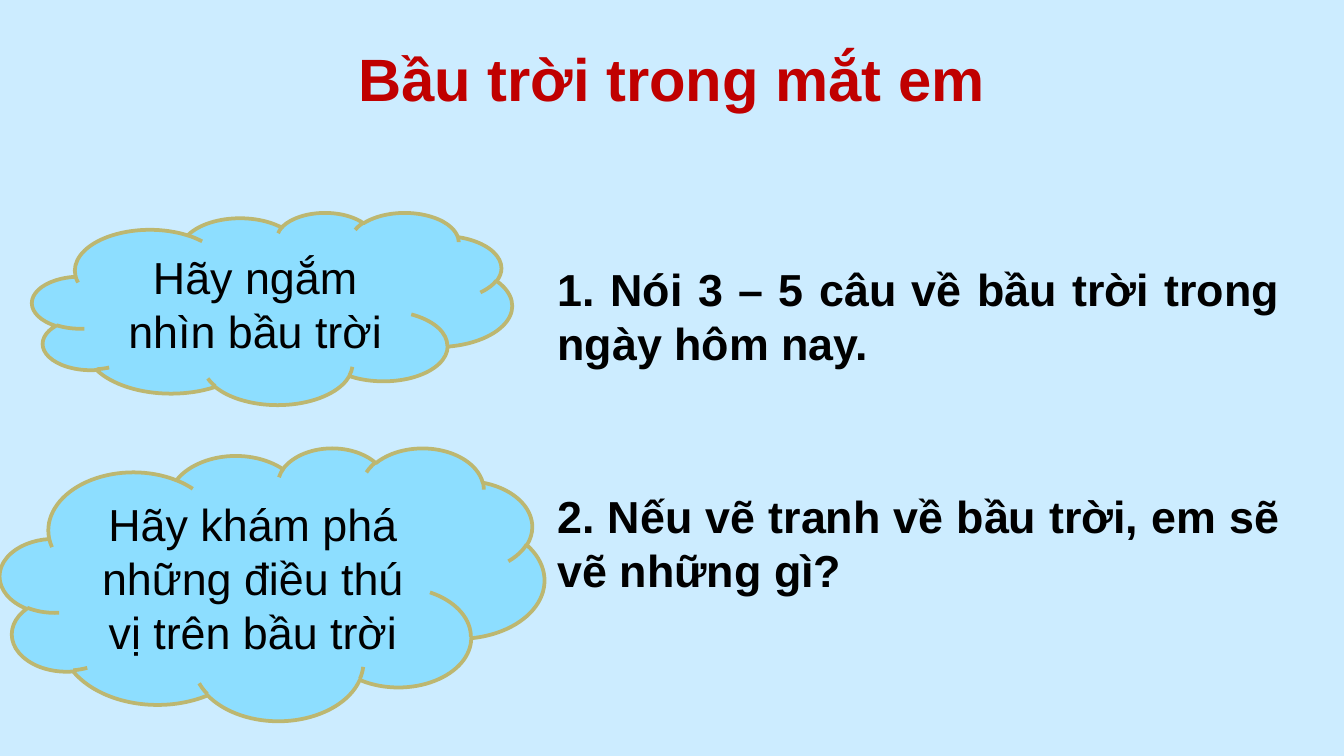
from dataclasses import dataclass

import pptx
import pptx.dml.color
import pptx.enum.shapes
import pptx.enum.text
import pptx.util
from pptx.util import Inches

ALIGN = pptx.enum.text.PP_ALIGN
ANCHOR = pptx.enum.text.MSO_ANCHOR


@dataclass(frozen=True)
class Theme:
    font: str = "Arial"
    background: str = "CCECFF"
    title: str = "C00000"
    text: str = "000000"
    cloud: str = "8DDEFF"
    outline: str = "BDB770"
    title_size: int = 32
    body_size: int = 24
    outline_width: int = 2


@dataclass(frozen=True)
class Block:
    text: str
    left: float
    top: float
    width: float
    height: float


THEME = Theme()

TITLE = Block("Bầu trời trong mắt em", 2.1, 0.26, 5.8, 0.64)
TASKS = [
    Block("1. Nói 3 – 5 câu về bầu trời trong ngày hôm nay.", 4.05, 1.9, 5.57, 0.91),
    Block("2. Nếu vẽ tranh về bầu trời, em sẽ vẽ những gì?", 4.05, 3.59, 5.57, 0.91),
]
CLOUDS = [
    Block("Hãy ngắm nhìn bầu trời", 0.24, 1.58, 3.57, 1.43),
    Block("Hãy khám phá những điều thú vị trên bầu trời", 0, 3.33, 4.05, 2.03),
]


def rgb(value: str) -> pptx.dml.color.RGBColor:
    return pptx.dml.color.RGBColor.from_string(value)


def bounds(block: Block) -> tuple:
    return tuple(Inches(v) for v in (block.left, block.top, block.width, block.height))


def write_text(shape, text: str, *, size: int = THEME.body_size, color: str = THEME.text,
               bold: bool = False, align=ALIGN.CENTER, anchor=ANCHOR.TOP) -> None:
    frame = shape.text_frame
    frame.word_wrap = True
    frame.vertical_anchor = anchor
    paragraph = frame.paragraphs[0]
    paragraph.alignment = align
    run = paragraph.add_run()
    run.text = text
    run.font.name = THEME.font
    run.font.size = pptx.util.Pt(size)
    run.font.bold = bold
    run.font.color.rgb = rgb(color)


def add_text(slide, block: Block, **text_format) -> None:
    shape = slide.shapes.add_textbox(*bounds(block))
    write_text(shape, block.text, bold=True, **text_format)
    shape.text_frame.auto_size = pptx.enum.text.MSO_AUTO_SIZE.SHAPE_TO_FIT_TEXT


def add_cloud(slide, block: Block) -> None:
    shape = slide.shapes.add_shape(pptx.enum.shapes.MSO_SHAPE.CLOUD, *bounds(block))
    shape.shadow.inherit = False
    shape.fill.solid()
    shape.fill.fore_color.rgb = rgb(THEME.cloud)
    shape.line.color.rgb = rgb(THEME.outline)
    shape.line.width = pptx.util.Pt(THEME.outline_width)
    write_text(shape, block.text, anchor=ANCHOR.MIDDLE)


def main() -> None:
    # Widescreen page, 16:9
    presentation = pptx.Presentation()
    presentation.slide_width = Inches(10)
    presentation.slide_height = Inches(10 * 9 / 16)
    slide = presentation.slides.add_slide(presentation.slide_layouts[6])

    # Background
    slide.background.fill.solid()
    slide.background.fill.fore_color.rgb = rgb(THEME.background)

    # Title and the two tasks
    add_text(slide, TITLE, size=THEME.title_size, color=THEME.title)
    for task in TASKS:
        add_text(slide, task, align=ALIGN.JUSTIFY)

    # Cloud prompts
    for cloud in CLOUDS:
        add_cloud(slide, cloud)

    presentation.save("out.pptx")


if __name__ == "__main__":
    main()
